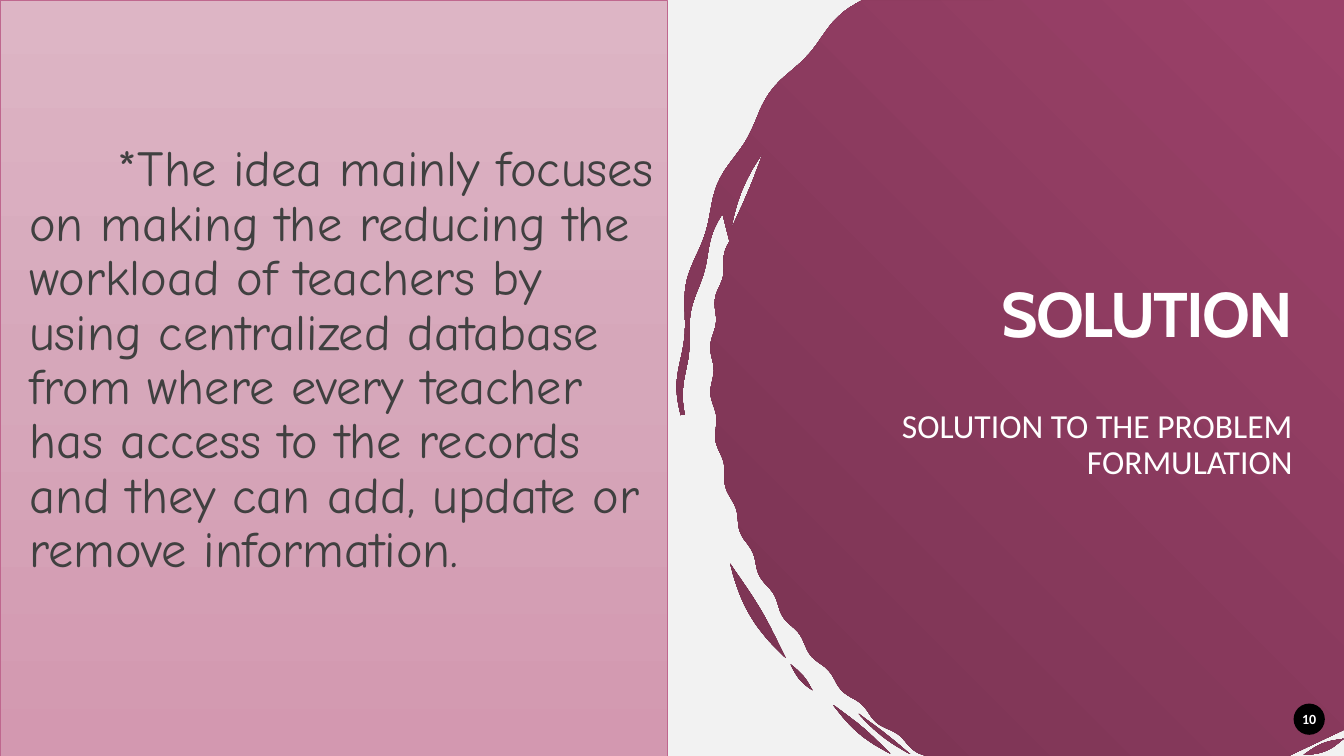
import math

import pptx
import pptx.util
import pptx.dml.color
import pptx.enum.shapes
import pptx.enum.text
import pptx.oxml
import pptx.oxml.ns

Inches = pptx.util.Inches
Pt = pptx.util.Pt
RGBColor = pptx.dml.color.RGBColor
PP_ALIGN = pptx.enum.text.PP_ALIGN
MSO_ANCHOR = pptx.enum.text.MSO_ANCHOR

BACKGROUND = RGBColor(0xF2, 0xF2, 0xF2)
PLUM_LIGHT = RGBColor(0x9B, 0x41, 0x69)
PLUM_DARK = RGBColor(0x67, 0x2C, 0x46)
PINK_LIGHT = RGBColor(0xDD, 0xB5, 0xC5)
PINK_MIDDLE = RGBColor(0xD6, 0xA7, 0xBA)
PINK_DARK = RGBColor(0xD3, 0x98, 0xB0)
PINK_LINE = RGBColor(0xBF, 0x67, 0x8E)
GREY = RGBColor(0x40, 0x40, 0x40)
WHITE = RGBColor(0xFF, 0xFF, 0xFF)
BLACK = RGBColor(0, 0, 0)

SLIDE_WIDTH, SLIDE_HEIGHT = 13.33, 7.5
CENTER_X, CENTER_Y, RADIUS = 11.61, 3.65, 4.55  # painted circle, in inches
UNITS_PER_INCH = 1000  # drawing units of the freeform


def arc(start, end, start_radius, end_radius, wave_height, waves):
    """Points of a wavy arc; angles in degrees, 0 at the left and positive upwards."""
    steps = math.ceil(abs(end - start)) * 2
    points = []
    for step in range(steps + 1):
        share = step / steps
        angle = math.radians(start + (end - start) * share)
        radius = (start_radius + (end_radius - start_radius) * share
                  + wave_height * math.sin(math.pi * waves * share))
        points.append((CENTER_X - radius * math.cos(angle),
                       CENTER_Y - radius * math.sin(angle)))
    return points


def write_text(shape, text, color, font_format, paragraph_format, frame_format):
    """Place one formatted paragraph in a shape and return it."""
    frame = shape.text_frame
    frame.text = text
    paragraph = frame.paragraphs[0]
    font = paragraph.runs[0].font
    font.color.rgb = color
    margins = dict.fromkeys(
        ["margin_left", "margin_top", "margin_right", "margin_bottom"], 0)
    frame_values = {**margins, "word_wrap": True,
                    "auto_size": pptx.enum.text.MSO_AUTO_SIZE.NONE, **frame_format}
    for target, values in [(frame, frame_values), (font, font_format),
                           (paragraph, {"space_before": Pt(0), **paragraph_format})]:
        for name, value in values.items():
            setattr(target, name, value)
    return paragraph


presentation = pptx.Presentation()
presentation.slide_width = Inches(SLIDE_WIDTH)
presentation.slide_height = Inches(SLIDE_HEIGHT)
slide = presentation.slides.add_slide(presentation.slide_layouts.get_by_name("Two Content"))
slide.background.fill.solid()
slide.background.fill.fore_color.rgb = BACKGROUND
title, body, subtitle = slide.placeholders

# Painted circle: down the outer stroke to its tip, back up its inner side,
# then down the rim of the circle and round the slide corners
outer_stroke = arc(50, -5.5, 4.76, 4.88, 0.03, 9)
inner_stroke = arc(-5.5, 19, 4.84, 4.7, 0.02, 5)
rim = arc(16, -57.8, RADIUS, RADIUS, 0.02, 25)
corners = [(12.78, SLIDE_HEIGHT), (SLIDE_WIDTH, 7.24), (SLIDE_WIDTH, 0)]
outlines = [outer_stroke + inner_stroke + rim + corners]

# Loose bristle marks, pointed at both ends: start angle, end angle, radius, thickness
bristle_marks = [
    (28, 17.5, 4.57, 0.06),     # gap inside the paint
    (-24, -37, 4.78, 0.12),
    (-38, -42, 4.78, 0.05),
    (-45, -54, 4.73, 0.07),
    (-48, -56, 4.62, 0.04),
    (-109, -115, 4.06, 0.08),   # bottom right corner
]
for start, end, radius, thickness in bristle_marks:
    outlines.append(arc(start, end, radius, radius, thickness / 2, 1)
                    + arc(end, start, radius, radius, -thickness / 2, 1))

builder = slide.shapes.build_freeform(scale=Inches(1) / UNITS_PER_INCH)
for outline in outlines:
    points = [(x * UNITS_PER_INCH, y * UNITS_PER_INCH) for x, y in outline]
    builder.move_to(*points[0])
    builder.add_line_segments(points[1:], close=True)
brush = builder.convert_to_shape()
brush.shadow.inherit = False
brush.line.fill.background()
slide.shapes._spTree.insert(2, brush._element)

# Placeholder positions
for shape, place in [(title, (8.6, 1.88, 4.22, 1.6)), (body, (0, 0, 6.62, SLIDE_HEIGHT)),
                     (subtitle, (8.6, 4.06, 4.22, 1.55))]:
    shape.left, shape.top, shape.width, shape.height = map(Inches, place)

# Gradients with evenly spaced colours: radial from the top right, linear downwards
radial = '<a:path path="circle"><a:fillToRect l="100000" b="100000"/></a:path>'
downwards = '<a:lin ang="5400000" scaled="0"/>'
for shape, colors, direction in [
        (brush, [PLUM_LIGHT, PLUM_DARK], radial),
        (body, [PINK_LIGHT, PINK_MIDDLE, PINK_DARK], downwards)]:
    shape.fill.gradient()
    gradient = shape._element.spPr.find(pptx.oxml.ns.qn("a:gradFill"))
    stops = "".join(
        f'<a:gs pos="{100000 * i // (len(colors) - 1)}"><a:srgbClr val="{color}"/></a:gs>'
        for i, color in enumerate(colors))
    gradient.getparent().replace(gradient, pptx.oxml.parse_xml(
        f'<a:gradFill {pptx.oxml.ns.nsdecls("a")} rotWithShape="1">'
        f'<a:gsLst>{stops}</a:gsLst>{direction}</a:gradFill>'))

# Pink panel with the idea
body.line.color.rgb = PINK_LINE
body.line.width = Pt(0.5)
idea = write_text(
    body,
    "*The idea mainly focuses on making the reducing the workload of teachers by using "
    "centralized database from where every teacher has access to the records and they can "
    "add, update or remove information.",
    GREY, {"name": "Comic Neue", "size": Pt(36)},
    {"line_spacing": 0.9, "alignment": PP_ALIGN.LEFT},
    {"margin_top": Inches(1.42), "margin_right": Inches(0.08),
     "vertical_anchor": MSO_ANCHOR.TOP})

# Title and subtitle
heading_format = {"line_spacing": 0.9, "alignment": PP_ALIGN.RIGHT}
heading = write_text(
    title, "SOLUTION", WHITE, {"name": "Cabin", "size": Pt(45), "bold": True},
    heading_format, {"vertical_anchor": MSO_ANCHOR.BOTTOM})
heading.runs[0].font._element.set("spc", "-150")
tagline = write_text(
    subtitle, "SOLUTION TO THE PROBLEM FORMULATION", WHITE,
    {"name": "Calibri", "size": Pt(24)},
    heading_format, {"vertical_anchor": MSO_ANCHOR.TOP})

# No bullets; the first line of the idea is indented
for paragraph, left, indent in [(idea, 0.29, 0.88), (tagline, 0, 0)]:
    properties = paragraph._p.get_or_add_pPr()
    properties.set("marL", str(Inches(left)))
    properties.set("indent", str(Inches(indent)))
    properties.append(pptx.oxml.parse_xml(f'<a:buNone {pptx.oxml.ns.nsdecls("a")}/>'))

# Slide number badge
badge = slide.shapes.add_shape(
    pptx.enum.shapes.MSO_SHAPE.OVAL, Inches(12.83), Inches(6.98), Inches(0.31), Inches(0.31))
badge.shadow.inherit = False
badge.fill.solid()
badge.fill.fore_color.rgb = BLACK
badge.line.fill.background()
write_text(badge, "10", WHITE, {"name": "Calibri", "size": Pt(10), "bold": True},
           {"alignment": PP_ALIGN.CENTER}, {"vertical_anchor": MSO_ANCHOR.MIDDLE})

presentation.save("out.pptx")
